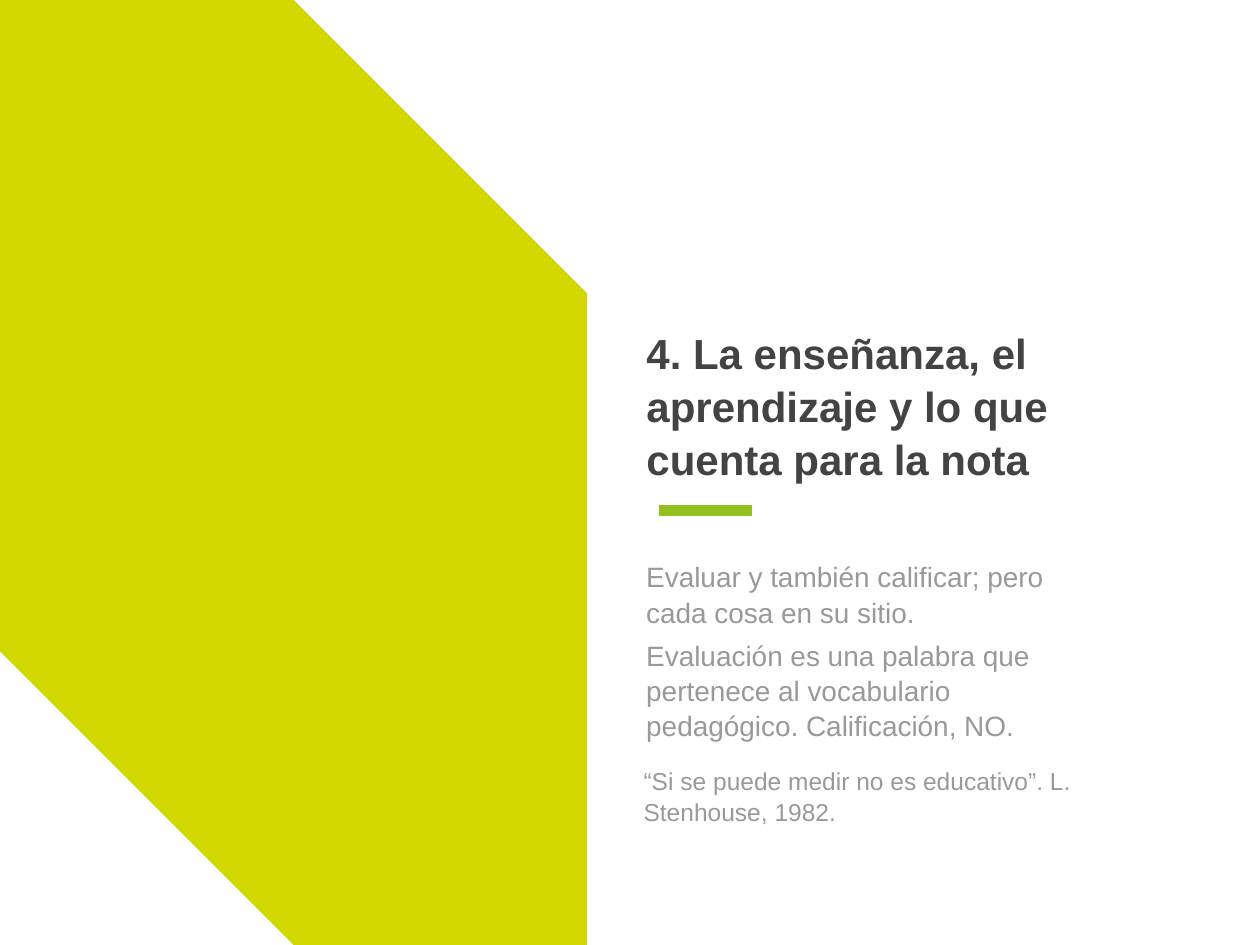
"""Build the section slide on teaching, learning and marks."""
from dataclasses import dataclass

from lxml.etree import SubElement
from pptx import Presentation
from pptx.dml.color import RGBColor
from pptx.enum.shapes import MSO_CONNECTOR as Connector, MSO_SHAPE as Preset
from pptx.enum.text import MSO_ANCHOR as Anchor, MSO_AUTO_SIZE as AutoSize, PP_ALIGN as Align
from pptx.oxml.ns import qn
from pptx.util import Pt

COLORS = {"panel": "D2D700", "accent": "93C01F", "title": "434343", "body": "999999", "page": "FFFFFF"}
FONT = "Arial"
INSET = Pt(7.2)
LINE_SPACING = 1.05
TEXT_LEFT = 362.2


@dataclass
class TextBlock:
    text: str
    left: float
    top: float
    width: float
    height: float
    size: float
    color: str = "body"
    bold: bool = False
    anchor: Anchor = Anchor.TOP


TITLE = TextBlock("4. La enseñanza, el aprendizaje y lo que cuenta para la nota",
                  TEXT_LEFT, 157, 317.5, 126.7, 24, "title", True, Anchor.BOTTOM)
BODY = [
    TextBlock("Evaluar y también calificar; pero cada cosa en su sitio.",
              TEXT_LEFT, 311.8, 278.6, 49.7, 16),
    TextBlock("Evaluación es una palabra que pertenece al vocabulario pedagógico. Calificación, NO.",
              TEXT_LEFT, 356.7, 278.6, 61.2, 16),
    TextBlock("“Si se puede medir no es educativo”. L. Stenhouse, 1982.",
              360.7, 429.8, 293, 49.7, 14),
]


def rgb(name: str) -> RGBColor:
    """Return the named palette colour."""
    return RGBColor.from_string(COLORS[name])


def fill_text(shape, block: TextBlock) -> None:
    """Place a text shape and write its single formatted run."""
    shape.left, shape.top = Pt(block.left), Pt(block.top)
    shape.width, shape.height = Pt(block.width), Pt(block.height)
    frame = shape.text_frame
    frame.word_wrap = True
    frame.auto_size = AutoSize.NONE
    frame.vertical_anchor = block.anchor
    frame.margin_left = frame.margin_right = INSET
    frame.margin_top = frame.margin_bottom = INSET
    paragraph = frame.paragraphs[0]
    paragraph.alignment = Align.LEFT
    paragraph.line_spacing = LINE_SPACING
    paragraph.space_before = paragraph.space_after = Pt(0)
    run = paragraph.add_run()
    run.text = block.text
    run.font.name = FONT
    run.font.size = Pt(block.size)
    run.font.bold = block.bold
    run.font.color.rgb = rgb(block.color)


def add_panel(slide) -> None:
    """Draw the snipped panel on the left."""
    panel = slide.shapes.add_shape(Preset.SNIP_2_DIAG_RECTANGLE, 0, 0, Pt(335.5), Pt(540))
    panel.adjustments[0], panel.adjustments[1] = 0, 0.5
    panel.shadow.inherit = False
    panel.fill.solid()
    panel.fill.fore_color.rgb = rgb("panel")
    panel.line.fill.background()


def add_rule(slide) -> None:
    """Draw the thick accent line under the title."""
    rule = slide.shapes.add_connector(Connector.STRAIGHT, Pt(376.3), Pt(291.8), Pt(429.8), Pt(291.8))
    rule.line.width = Pt(6)
    rule.line.color.rgb = rgb("accent")
    SubElement(rule._element.spPr, qn("a:effectLst"))


def main() -> None:
    """Assemble and save the presentation."""
    presentation = Presentation()
    presentation.slide_width, presentation.slide_height = Pt(720), Pt(540)
    slide = presentation.slides.add_slide(presentation.slide_layouts[5])
    slide.background.fill.solid()
    slide.background.fill.fore_color.rgb = rgb("page")
    add_panel(slide)
    add_rule(slide)
    fill_text(slide.shapes.title, TITLE)
    for block in BODY:
        fill_text(slide.shapes.add_textbox(0, 0, 0, 0), block)
    presentation.save("out.pptx")


if __name__ == "__main__":
    main()
